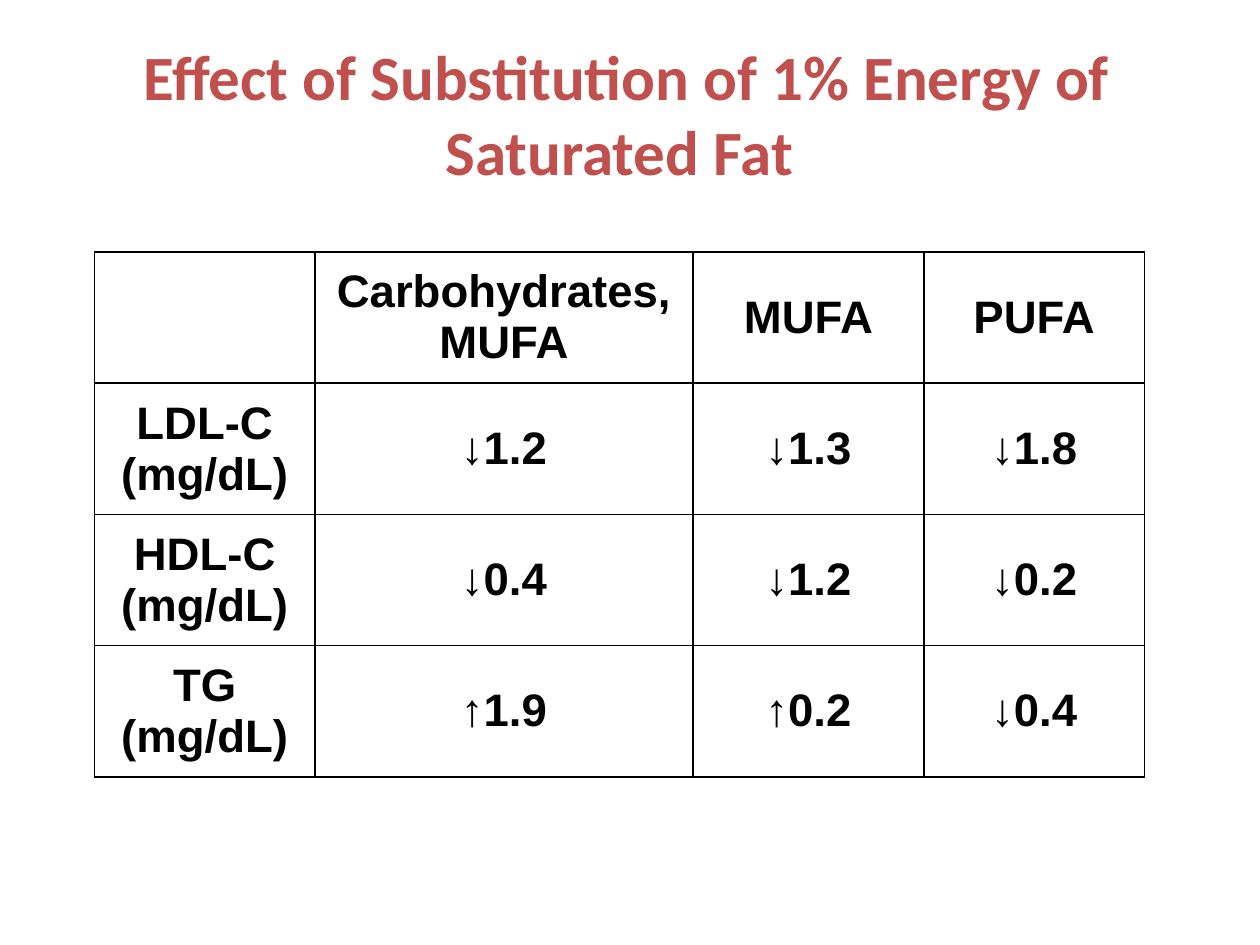
from lxml.etree import SubElement
from pptx import Presentation
from pptx.dml.color import RGBColor
from pptx.enum.text import MSO_ANCHOR, MSO_AUTO_SIZE, PP_ALIGN
from pptx.oxml.ns import qn
from pptx.util import Pt

RED = RGBColor(0xC0, 0x50, 0x4D)
BLACK = RGBColor(0, 0, 0)

TITLE = "Effect of Substitution of 1% Energy of Saturated Fat "
ROWS = [
    ["", "Carbohydrates, MUFA", "MUFA", "PUFA"],
    ["LDL-C (mg/dL)", "↓1.2", "↓1.3", "↓1.8"],
    ["HDL-C (mg/dL)", "↓0.4", "↓1.2", "↓0.2"],
    ["TG (mg/dL)", "↑1.9", "↑0.2", "↓0.4"],
]
COLUMN_WIDTHS = [126, 216, 132, 126]
ROW_HEIGHT = 75


def write_text(frame, text, *, font, size, color, bold=True, align=PP_ALIGN.CENTER):
    para = frame.paragraphs[0]
    para.alignment = align
    if not text:
        para.font.size = Pt(size)
        return
    span = para.add_run()
    span.text = text
    span.font.name = font
    span.font.size = Pt(size)
    span.font.bold = bold
    span.font.color.rgb = color


class SlideBuilder:
    title_style = {"font": "Calibri", "size": 36, "color": RED}
    cell_style = {"font": "Arial", "size": 26, "color": BLACK}
    border_width = 1

    def __init__(self, page):
        self.page = page

    def add_title(self, text, left, top, width, height):
        box = self.page.shapes.title
        box.left, box.top = Pt(left), Pt(top)
        box.width, box.height = Pt(width), Pt(height)
        frame = box.text_frame
        frame.auto_size = MSO_AUTO_SIZE.NONE
        frame.word_wrap = True
        frame.vertical_anchor = MSO_ANCHOR.MIDDLE
        write_text(frame, text, **self.title_style)

    def add_table(self, rows, left, top, column_widths, row_height):
        table = self.page.shapes.add_table(
            len(rows), len(column_widths), Pt(left), Pt(top),
            Pt(sum(column_widths)), Pt(row_height * len(rows))).table
        table.first_row = table.horz_banding = False
        for column, width in zip(table.columns, column_widths):
            column.width = Pt(width)
        for row, texts in zip(table.rows, rows):
            row.height = Pt(row_height)
            for cell, text in zip(row.cells, texts):
                self.format_cell(cell, text)

    def format_cell(self, cell, text):
        cell.vertical_anchor = MSO_ANCHOR.MIDDLE
        cell.margin_left = cell.margin_right = Pt(7.2)
        cell.margin_top = cell.margin_bottom = Pt(3.6)
        write_text(cell.text_frame, text, **self.cell_style)
        # Borders come before the fill in the cell properties
        properties = cell._tc.get_or_add_tcPr()
        for side in ("a:lnL", "a:lnR", "a:lnT", "a:lnB"):
            line = SubElement(properties, qn(side), w=str(Pt(self.border_width)))
            fill = SubElement(line, qn("a:solidFill"))
            SubElement(fill, qn("a:srgbClr"), val=str(BLACK))
        cell.fill.background()


def main():
    deck = Presentation()
    deck.slide_width, deck.slide_height = Pt(720), Pt(540)
    builder = SlideBuilder(deck.slides.add_slide(deck.slide_layouts[5]))

    # Heading
    builder.add_title(TITLE, -2, 19.5, 720, 90)

    # Lipid changes by replacement nutrient
    builder.add_table(ROWS, 54, 144, COLUMN_WIDTHS, ROW_HEIGHT)

    deck.save("out.pptx")


if __name__ == "__main__":
    main()
